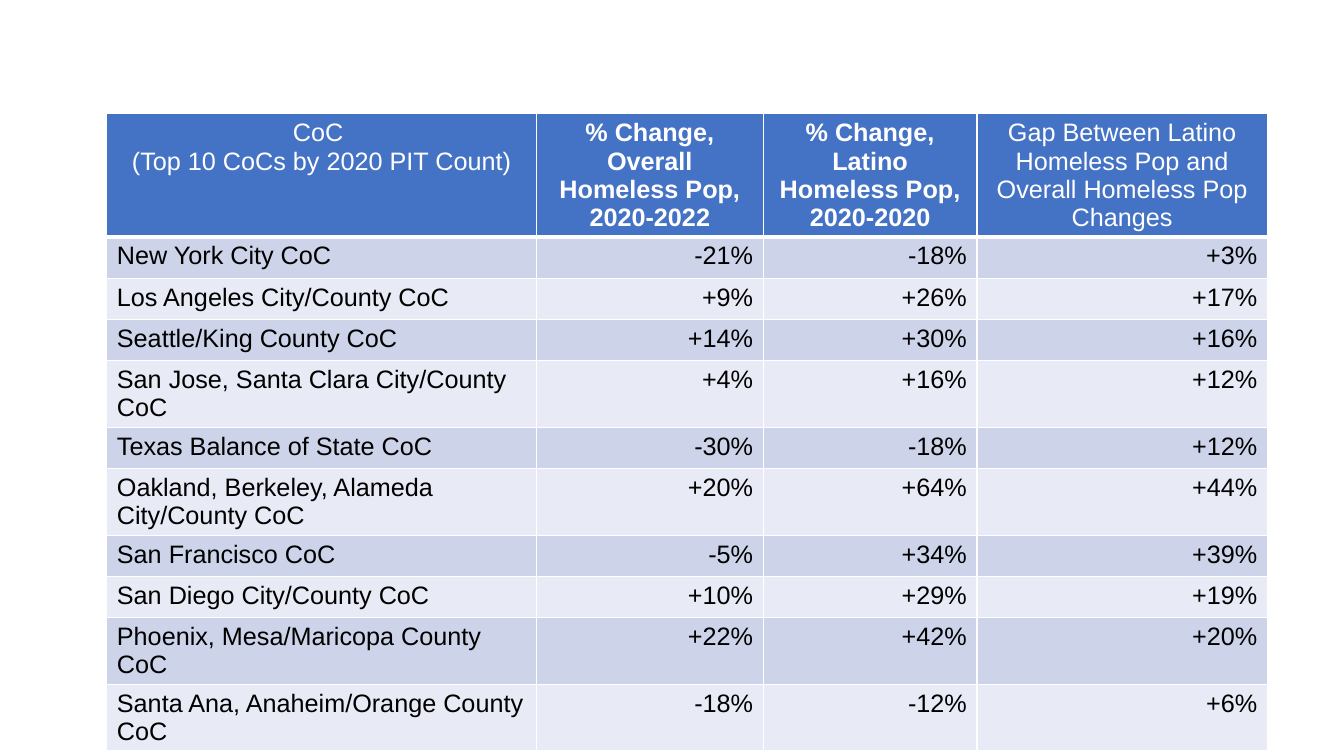
from lxml import etree
from pptx import Presentation
from pptx.dml.color import RGBColor
from pptx.enum import text
from pptx.oxml.ns import qn
from pptx.util import Inches, Pt

FONT = "Arial"
WHITE, BLACK, BLUE = "FFFFFF", "000000", "4472C4"
BANDS = ("CDD4EA", "E8EBF5")
LEFT, CENTER, RIGHT = (text.PP_ALIGN.LEFT, text.PP_ALIGN.CENTER,
                       text.PP_ALIGN.RIGHT)

COL_WIDTHS = (4.26, 2.25, 2.12, 2.88)
ROW_HEIGHT = 0.41

# Header text and whether it is bold
HEADERS = (
    ("CoC \n(Top 10 CoCs by 2020 PIT Count)", False),
    ("% Change, Overall Homeless Pop, 2020-2022", True),
    ("% Change, Latino Homeless Pop, 2020-2020", True),
    ("Gap Between Latino Homeless Pop and Overall Homeless Pop Changes", False),
)
ROWS = (
    ("New York City CoC", "-21%", "-18%", "+3%"),
    ("Los Angeles City/County CoC", "+9%", "+26%", "+17%"),
    ("Seattle/King County CoC", "+14%", "+30%", "+16%"),
    ("San Jose, Santa Clara City/County CoC", "+4%", "+16%", "+12%"),
    ("Texas Balance of State CoC", "-30%", "-18%", "+12%"),
    ("Oakland, Berkeley, Alameda City/County CoC", "+20%", "+64%", "+44%"),
    ("San Francisco CoC", "-5%", "+34%", "+39%"),
    ("San Diego City/County CoC", "+10%", "+29%", "+19%"),
    ("Phoenix, Mesa/Maricopa County CoC", "+22%", "+42%", "+20%"),
    ("Santa Ana, Anaheim/Orange County CoC", "-18%", "-12%", "+6%"),
)


def rgb(color):
    return RGBColor.from_string(color)


def write(p, content, size=18, color=BLACK, bold=False, align=LEFT):
    p.alignment = align
    for i, line in enumerate(content.split("\n")):
        if i:
            p.add_line_break()
        r = p.add_run()
        r.text = line
        r.font.name = FONT
        r.font.size = Pt(size)
        r.font.bold = bold
        r.font.color.rgb = rgb(color)


def set_borders(cell, top=1, bottom=1):
    tc_pr = cell._tc.get_or_add_tcPr()
    for side, width in (("L", 1), ("R", 1), ("T", top), ("B", bottom)):
        ln = etree.SubElement(tc_pr, qn(f"a:ln{side}"), w=str(Pt(width)))
        fill = etree.SubElement(ln, qn("a:solidFill"))
        etree.SubElement(fill, qn("a:srgbClr"), val=WHITE)


def format_cell(cell, content, fill, top=1, bottom=1, **text_format):
    set_borders(cell, top, bottom)
    cell.fill.solid()
    cell.fill.fore_color.rgb = rgb(fill)
    write(cell.text_frame.paragraphs[0], content, **text_format)


def add_change_table(slide):
    n_rows = len(ROWS) + 1
    table = slide.shapes.add_table(
        n_rows, len(COL_WIDTHS), Inches(1.06), Inches(1.13),
        Inches(sum(COL_WIDTHS)), Inches(ROW_HEIGHT * n_rows)).table
    for column, width in zip(table.columns, COL_WIDTHS):
        column.width = Inches(width)
    for row in table.rows:
        row.height = Inches(ROW_HEIGHT)

    # Header row
    for col, (content, bold) in enumerate(HEADERS):
        format_cell(table.cell(0, col), content, BLUE, bottom=3,
                    color=WHITE, bold=bold, align=CENTER)

    # Banded body rows: names to the left, figures to the right
    for i, values in enumerate(ROWS):
        for col, content in enumerate(values):
            format_cell(table.cell(i + 1, col), content, BANDS[i % 2],
                        top=1 if i else 3, align=RIGHT if col else LEFT)


def main():
    prs = Presentation()
    prs.slide_width, prs.slide_height = Inches(13.33), Inches(7.5)
    slide = prs.slides.add_slide(prs.slide_layouts[6])
    add_change_table(slide)
    prs.save("out.pptx")


if __name__ == "__main__":
    main()
